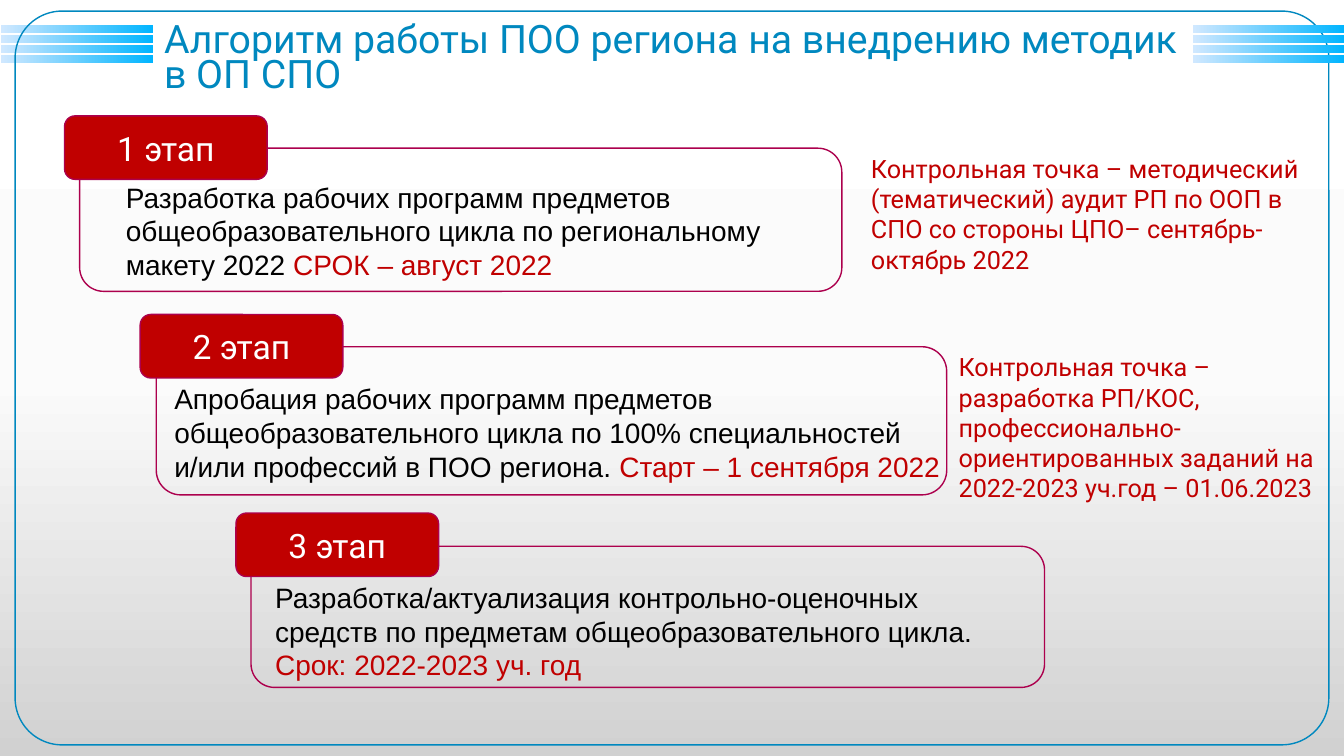
from copy import deepcopy

from pptx import Presentation
from pptx.dml.color import RGBColor
from pptx.enum.shapes import MSO_SHAPE
from pptx.enum.text import MSO_ANCHOR, PP_ALIGN
from pptx.oxml.ns import qn
from pptx.util import Inches, Pt

BLUE = RGBColor(0x00, 0x88, 0xBF)
BAR_LIGHT = RGBColor(0xD1, 0xE8, 0xFF)
BAR_DARK = RGBColor(0x00, 0xB5, 0xFF)
RED = RGBColor(0xC0, 0x00, 0x00)
CRIMSON = RGBColor(0xAC, 0x00, 0x4D)
BLACK = RGBColor(0x00, 0x00, 0x00)
WHITE = RGBColor(0xFF, 0xFF, 0xFF)
NEAR_WHITE = RGBColor(0xFB, 0xFB, 0xFB)
GREY = RGBColor(0xD1, 0xD1, 0xD1)

BADGE_SIZE = (2.01, 0.63)

# Stage label, badge corner, frame box, text box, task, deadline
STAGES = [
    ("1 этап", (0.64, 1.15), (0.79, 1.47, 7.56, 1.42), (1.15, 1.74, 7.2, 1.11),
     "Разработка рабочих программ предметов общеобразовательного цикла "
     "по региональному макету 2022 ", "СРОК – август 2022"),
    ("2 этап", (1.39, 3.12), (1.55, 3.44, 7.84, 1.47), (1.63, 3.74, 7.89, 1.11),
     "Апробация рабочих программ предметов общеобразовательного цикла "
     "по 100% специальностей и/или профессий в ПОО региона. ",
     "Старт – 1 сентября 2022"),
    ("3 этап", (2.34, 5.09), (2.49, 5.42, 7.87, 1.4), (2.63, 5.71, 7.6, 1.11),
     "Разработка/актуализация контрольно-оценочных средств по предметам "
     "общеобразовательного цикла. ", "Срок: 2022-2023 уч. год"),
]

CHECKPOINTS = [
    ((8.54, 1.47, 4.63, 1.31),
     "Контрольная точка – методический (тематический) аудит РП по ООП в СПО "
     "со стороны ЦПО– сентябрь-октябрь 2022"),
    ((9.41, 3.44, 3.73, 1.62),
     "Контрольная точка – разработка РП/КОС, профессионально-ориентированных "
     "заданий на 2022-2023 уч.год – 01.06.2023"),
]


def paint_background(slide):
    fill = slide.background.fill
    fill.gradient()
    fill.gradient_angle = 270
    stop_list = slide.element.find(".//" + qn("a:gsLst"))
    stop_list.insert(1, deepcopy(stop_list[0]))
    stops = [(0, WHITE), (0.5, NEAR_WHITE), (1, GREY)]
    for stop, (position, color) in zip(fill.gradient_stops, stops):
        stop.position = position
        stop.color.rgb = color


def add_bars(slide, left):
    for row in range(4):
        bar = slide.shapes.add_shape(
            MSO_SHAPE.RECTANGLE, Inches(left), Inches(0.25 + row * 0.097),
            Inches(1.51), Inches(0.08))
        bar.shadow.inherit = False
        bar.line.fill.background()
        bar.fill.gradient()
        bar.fill.gradient_angle = 0
        for stop, color in zip(bar.fill.gradient_stops, (BAR_LIGHT, BAR_DARK)):
            stop.color.rgb = color


def add_rounded(slide, box, line_color, fill_color=None):
    rounded = slide.shapes.add_shape(
        MSO_SHAPE.ROUNDED_RECTANGLE, *map(Inches, box))
    rounded.shadow.inherit = False
    rounded.line.color.rgb = line_color
    rounded.line.width = Pt(1)
    if fill_color is None:
        rounded.fill.background()
    else:
        rounded.fill.solid()
        rounded.fill.fore_color.rgb = fill_color
    return rounded


def add_runs(paragraph, runs, size, font_name):
    for text, color in runs:
        run = paragraph.add_run()
        run.text = text
        run.font.size = Pt(size)
        run.font.name = font_name
        run.font.color.rgb = color


def add_text(slide, box, runs, size, font_name):
    frame = slide.shapes.add_textbox(*map(Inches, box)).text_frame
    frame.word_wrap = True
    paragraph = frame.paragraphs[0]
    add_runs(paragraph, runs, size, font_name)
    return paragraph


def add_stage(slide, label, badge_corner, frame_box, text_box, task, deadline):
    add_rounded(slide, frame_box, CRIMSON)
    add_text(slide, text_box, [(task, BLACK), (deadline, RED)], 20, "Arial")
    badge = add_rounded(slide, badge_corner + BADGE_SIZE, CRIMSON, RED)
    badge.text_frame.vertical_anchor = MSO_ANCHOR.MIDDLE
    caption = badge.text_frame.paragraphs[0]
    caption.alignment = PP_ALIGN.CENTER
    add_runs(caption, [(label, WHITE)], 24, "Roboto")


def main():
    prs = Presentation()
    prs.slide_width = Inches(13.33)
    prs.slide_height = Inches(7.5)
    slide = prs.slides.add_slide(prs.slide_layouts[6])

    # Background, side bars and border
    paint_background(slide)
    add_bars(slide, 0.01)
    border = add_rounded(slide, (0.15, 0.11, 13.03, 7.28), BLUE)
    border.adjustments[0] = 0.064
    add_bars(slide, 11.83)

    # Title
    title = add_text(
        slide, (1.53, 0.2, 10.27, 0.9),
        [("Алгоритм работы ПОО региона на внедрению методик в ОП СПО", BLUE)],
        28, "Roboto")
    title.line_spacing = 0.75

    # Stages
    for stage in STAGES:
        add_stage(slide, *stage)

    # Checkpoints
    for box, checkpoint in CHECKPOINTS:
        add_text(slide, box, [(checkpoint, RED)], 18, "Roboto")

    prs.save("out.pptx")


if __name__ == "__main__":
    main()
